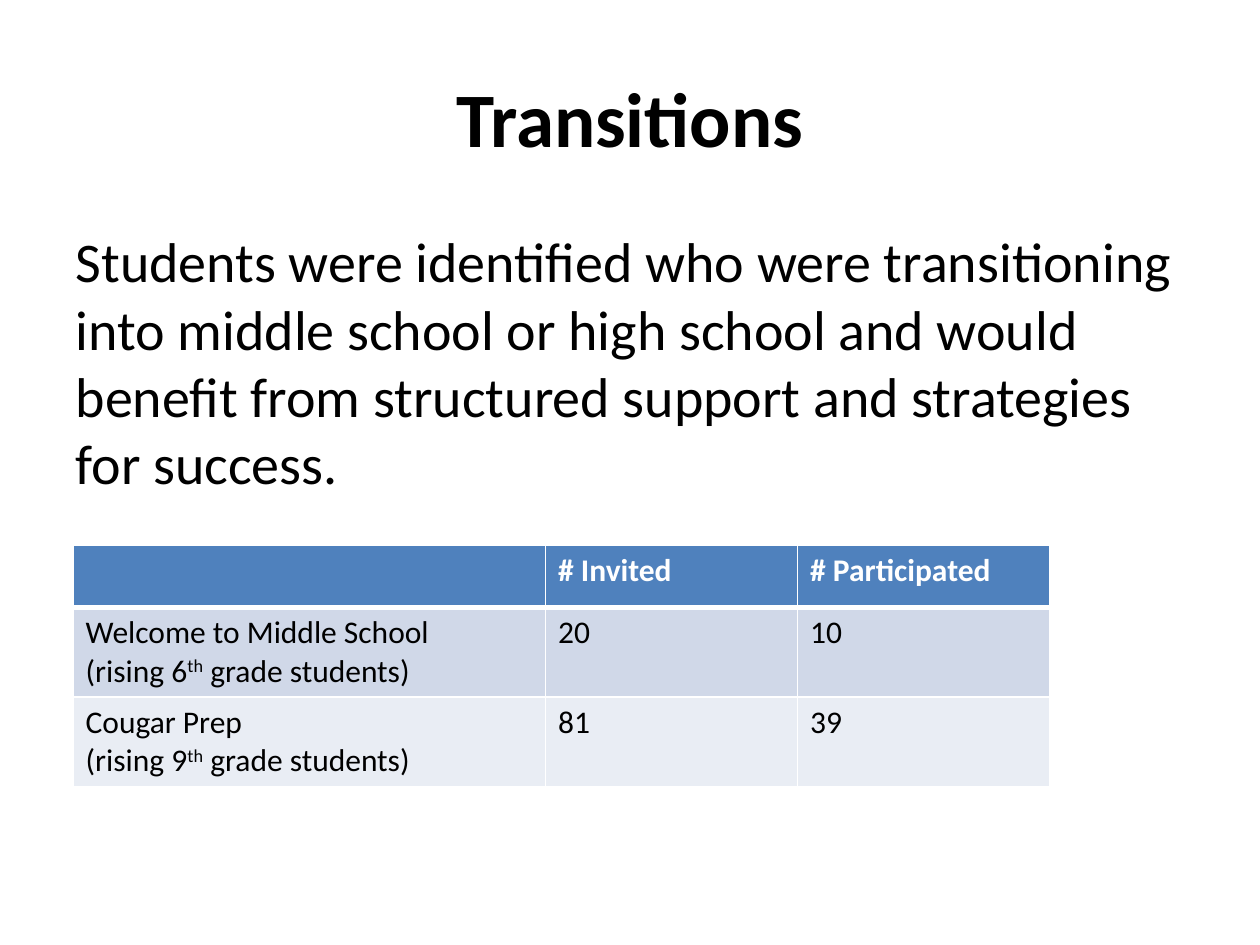
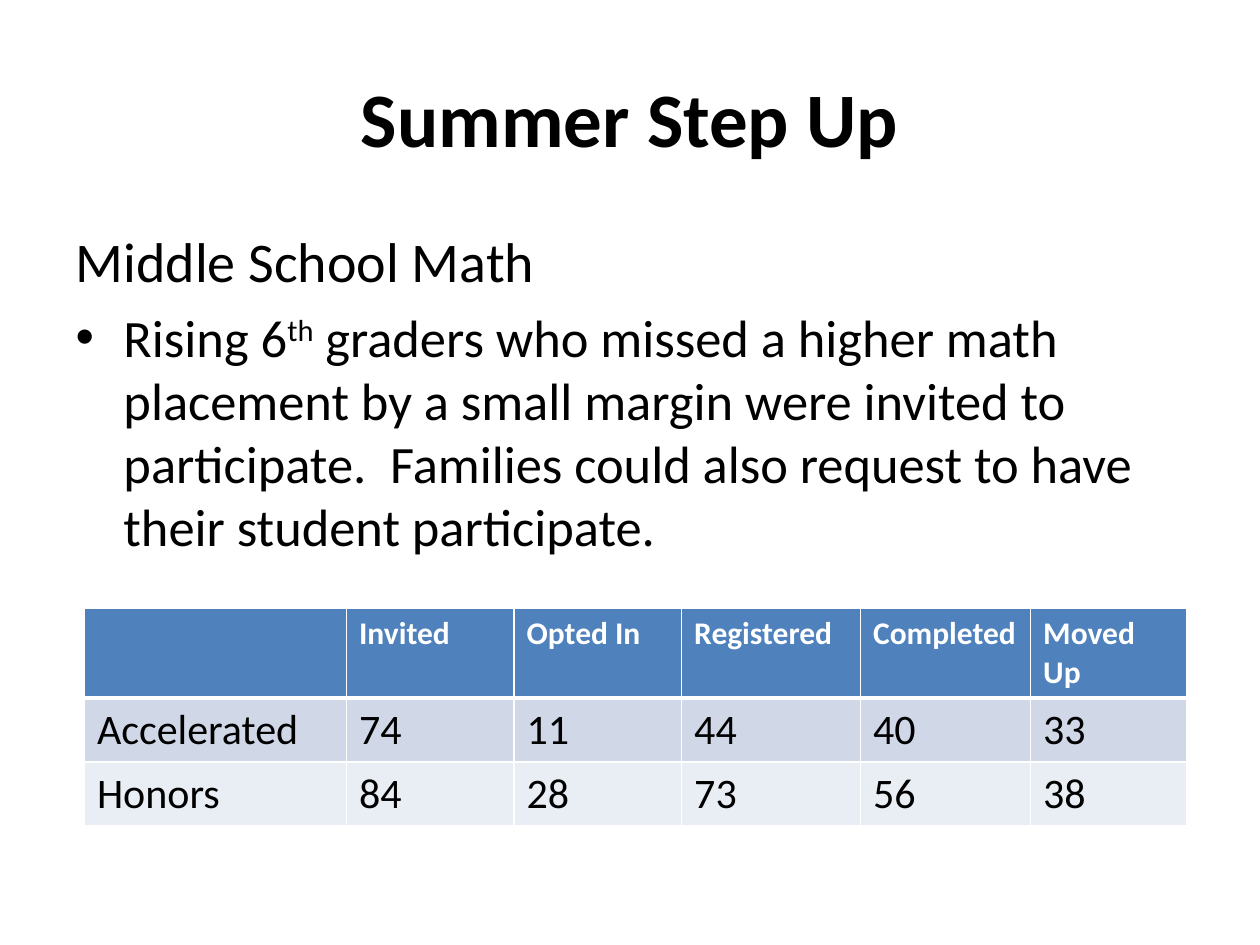
from lxml.etree import SubElement
from pptx import Presentation
from pptx.dml.color import RGBColor
from pptx.enum.text import MSO_ANCHOR, MSO_AUTO_SIZE, PP_ALIGN
from pptx.oxml.ns import qn
from pptx.util import Inches, Pt

# Shared look
BLACK = RGBColor(0x00, 0x00, 0x00)
WHITE = RGBColor(0xFF, 0xFF, 0xFF)
HEADER_BLUE = RGBColor(0x4F, 0x81, 0xBD)
BAND_DARK = RGBColor(0xD0, 0xD8, 0xE8)
BAND_LIGHT = RGBColor(0xE9, 0xED, 0xF4)
FONT = "Calibri"
TITLE_FORMAT = {"size": Pt(44), "bold": True}
HEADER_FORMAT = {"size": Pt(18), "bold": True}
TITLE_AREA = (0.5, 0.3, 9, 1.25)
BODY_AREA = (0.5, 1.75, 9, 4.95)


def place(shape, area):
    for name, length in zip(("left", "top", "width", "height"), area):
        setattr(shape, name, Inches(length))


def write(para, text, formats, color=BLACK):
    """Fill a paragraph; text between ^ marks is superscript."""
    for index, part in enumerate(text.split("^")):
        span = para.add_run()
        span.text = part
        for name, value in {"name": FONT, **formats}.items():
            setattr(span.font, name, value)
        span.font.color.rgb = color
        if index % 2:
            span.font._element.set("baseline", "30000")


def add_paragraphs(frame):
    """Yield the first paragraph of a frame, then new ones."""
    yield frame.paragraphs[0]
    while True:
        yield frame.add_paragraph()


def set_bullet(para, bulleted):
    indent = Inches(0.38) if bulleted else 0
    properties = para._p.get_or_add_pPr()
    properties.set("marL", str(indent))
    properties.set("indent", str(-indent))
    if bulleted:
        SubElement(properties, qn("a:buChar"), char="•")
    else:
        SubElement(properties, qn("a:buNone"))


def add_page(deck, title, lines):
    """Add a slide; each body line is (text, points, bulleted)."""
    page = deck.slides.add_slide(deck.slide_layouts[1])
    heading, body = page.shapes.title, page.placeholders[1]
    place(heading, TITLE_AREA)
    place(body, BODY_AREA)

    heading.text_frame.vertical_anchor = MSO_ANCHOR.MIDDLE
    para = heading.text_frame.paragraphs[0]
    para.alignment = PP_ALIGN.CENTER
    write(para, title, TITLE_FORMAT)

    body.text_frame.auto_size = MSO_AUTO_SIZE.NONE
    for (text, points, bulleted), para in zip(lines, add_paragraphs(body.text_frame)):
        set_bullet(para, bulleted)
        write(para, text, {"size": Pt(points)})
    return page


def set_borders(cell, row):
    """White 1 pt rules, with a 3 pt rule under the header."""
    points = {"L": 1, "R": 1, "T": 3 if row == 1 else 1, "B": 3 if row == 0 else 1}
    properties = cell._tc.get_or_add_tcPr()
    for side, width in points.items():
        line = SubElement(properties, qn(f"a:ln{side}"), w=str(Pt(width)))
        fill = SubElement(line, qn("a:solidFill"))
        SubElement(fill, qn("a:srgbClr"), val=str(WHITE))


def add_data_table(page, left, top, widths, heights, rows, points):
    frame = page.shapes.add_table(
        len(rows), len(widths), Inches(left), Inches(top),
        Inches(sum(widths)), Inches(sum(heights)))
    table = frame.table
    for column, width in zip(table.columns, widths):
        column.width = Inches(width)
    for row, height in zip(table.rows, heights):
        row.height = Inches(height)

    for r, values in enumerate(rows):
        header = r == 0
        band = HEADER_BLUE if header else (BAND_LIGHT, BAND_DARK)[r % 2]
        formats = HEADER_FORMAT if header else {"size": Pt(points), "bold": False}
        for c, value in enumerate(values):
            cell = table.cell(r, c)
            set_borders(cell, r)
            cell.fill.solid()
            cell.fill.fore_color.rgb = band
            if value:
                lines = value.split("\n")
                for line, para in zip(lines, add_paragraphs(cell.text_frame)):
                    write(para, line, formats, WHITE if header else BLACK)


def main():
    deck = Presentation()
    deck.slide_width, deck.slide_height = Inches(10), Inches(7.5)

    # Transitions
    page = add_page(deck, "Transitions", [
        ("Students were identified who were transitioning into middle school or "
         "high school and would benefit from structured support and strategies "
         "for success.", 32, False),
    ])
    add_data_table(page, 0.58, 4.33, [3.75, 2, 2], [0.49, 0.7, 0.7], [
        ["", "# Invited", "# Participated"],
        ["Welcome to Middle School\n(rising 6^th^ grade students)", "20", "10"],
        ["Cougar Prep\n(rising 9^th^ grade students)", "81", "39"],
    ], 18)

    # Summer Step Up
    page = add_page(deck, "Summer Step Up", [
        ("Middle School Math", 32, False),
        ("Rising 6^th^ graders who missed a higher math placement by a small "
         "margin were invited to participate.  Families could also request to "
         "have their student participate.", 30, True),
    ])
    widths = [2.08, 1.33, 1.33, 1.42, 1.35, 1.24]
    add_data_table(page, 0.67, 4.83, widths, [0.7, 0.5, 0.5], [
        ["", "Invited", "Opted In", "Registered", "Completed", "Moved Up"],
        ["Accelerated", "74", "11", "44", "40", "33"],
        ["Honors", "84", "28", "73", "56", "38"],
    ], 24)

    deck.save("out.pptx")


if __name__ == "__main__":
    main()
